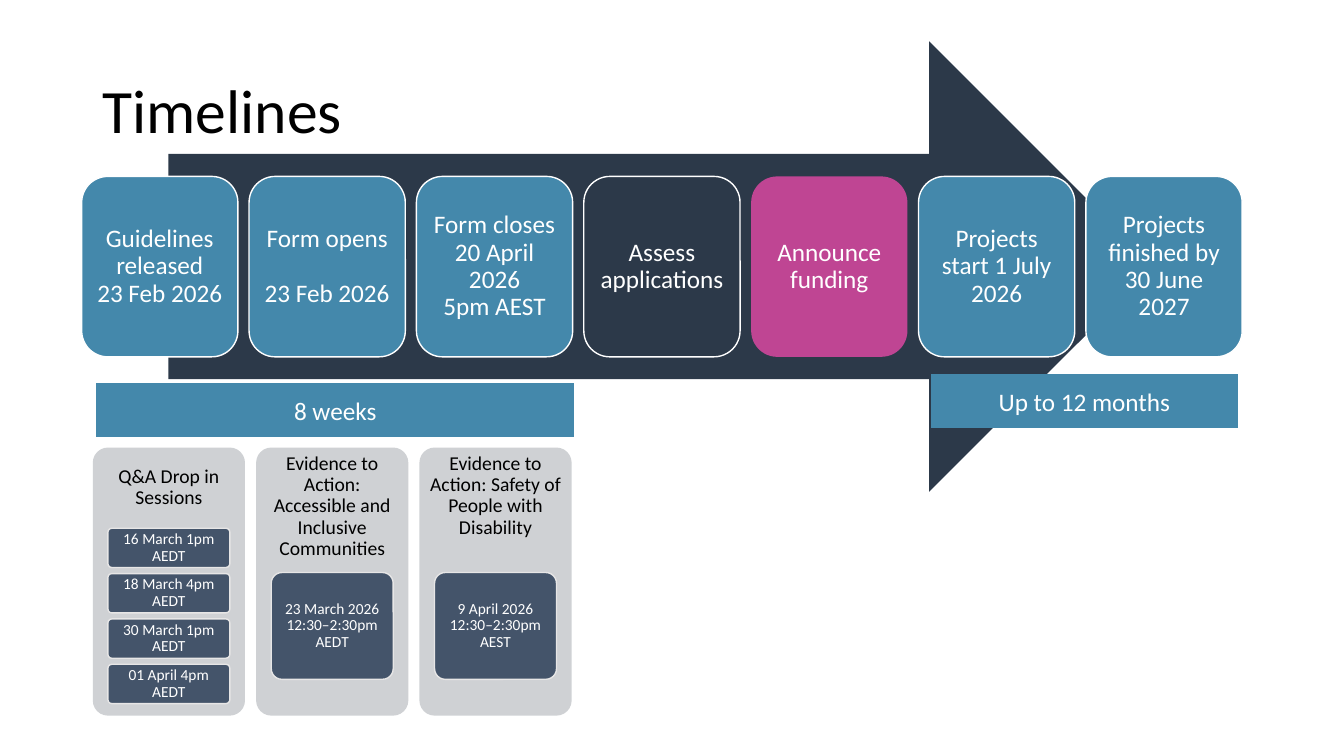
from pptx import Presentation
from pptx.dml.color import RGBColor
from pptx.enum.shapes import MSO_SHAPE
from pptx.enum.text import MSO_ANCHOR, PP_ALIGN
from pptx.util import Inches, Pt

COLORS = {
    "navy": "2C3949",
    "blue": "4488AB",
    "pink": "BF4593",
    "grey": "CFD1D4",
    "slate": "44546A",
    "pale": "E7E6E6",
    "white": "FFFFFF",
    "black": "000000",
}

STAGES = [
    ("Guidelines released\v23 Feb 2026", "blue", "white", 0),
    ("Form opens\n23 Feb 2026", "blue", "white", 19.8),
    ("Form closes\v20 April 2026\v5pm AEST", "blue", "white", 0),
    ("Assess applications", "navy", "white", 0),
    ("Announce funding", "pink", None, 0),
    ("Projects start 1 July 2026", "blue", "white", 0),
    ("Projects finished by 30 June 2027", "blue", "white", 0),
]

PERIODS = [
    ("Up to 12 months", 8.68, 3.57, 4.15),
    ("8 weeks", 0.1, 3.66, 6.45),
]

SESSIONS = [
    ("Q&A Drop in Sessions", MSO_ANCHOR.MIDDLE, 0.8, 5.24, 0.39,
     ["16 March 1pm AEDT", "18 March 4pm AEDT",
      "30 March 1pm AEDT", "01 April 4pm AEDT"]),
    ("Evidence to Action: Accessible and Inclusive Communities",
     MSO_ANCHOR.TOP, 1.2, 5.68, 1.06, ["23 March 2026 12:30–2:30pm AEDT"]),
    ("Evidence to Action: Safety of People with Disability",
     MSO_ANCHOR.TOP, 1.2, 5.68, 1.06, ["9 April 2026\v12:30–2:30pm AEST"]),
]


class Deck:
    font = "Calibri"

    def __init__(self, prs):
        self.slide = prs.slides.add_slide(prs.slide_layouts[6])

    def color(self, name):
        return RGBColor.from_string(COLORS[name])

    def set_text(self, sp, text, size, color="white", align=PP_ALIGN.CENTER,
                 anchor=MSO_ANCHOR.MIDDLE, inset=(0.1, 0.05), leading=0.9, gap=0):
        tf = sp.text_frame
        tf.word_wrap = True
        tf.vertical_anchor = anchor
        tf.margin_left = tf.margin_right = Inches(inset[0])
        tf.margin_top = tf.margin_bottom = Inches(inset[1])
        tf.text = text
        for i, p in enumerate(tf.paragraphs):
            p.alignment = align
            p.line_spacing = leading
            if i:
                p.space_before = Pt(gap)
            for r in p.runs:
                r.font.name = self.font
                r.font.size = Pt(size)
                r.font.color.rgb = self.color(color)

    def shape(self, kind, x, y, w, h, fill, line=None, adj=None):
        sp = self.slide.shapes.add_shape(
            kind, Inches(x), Inches(y), Inches(w), Inches(h))
        sp.shadow.inherit = False
        sp.fill.solid()
        sp.fill.fore_color.rgb = self.color(fill)
        if line:
            sp.line.color.rgb = self.color(line)
            sp.line.width = Pt(1)
        else:
            sp.line.fill.background()
        if adj is not None:
            sp.adjustments[0] = adj
        return sp

    def label(self, x, y, w, h, text, size, **style):
        sp = self.slide.shapes.add_textbox(
            Inches(x), Inches(y), Inches(w), Inches(h))
        self.set_text(sp, text, size, **style)

    def stage(self, x, text, fill, line, gap):
        sp = self.shape(MSO_SHAPE.ROUNDED_RECTANGLE, x, 1.75, 1.55, 1.79, fill, line)
        self.set_text(sp, text, 18, inset=(0.07, 0.07), gap=gap)

    def period(self, text, x, y, w):
        sp = self.shape(MSO_SHAPE.MATH_MINUS, x, y, w, 0.82, "blue", adj=0.66)
        self.set_text(sp, text, 18, leading=1.0)

    def session(self, x, title, anchor, title_height, top, height, dates):
        self.shape(MSO_SHAPE.ROUNDED_RECTANGLE, x, 4.44, 1.51, 2.66, "grey", adj=0.1)
        self.label(x, 4.44, 1.51, title_height, title, 14, color="black",
                   anchor=anchor, inset=(0.06, 0.06))
        for i, date in enumerate(dates):
            sp = self.shape(MSO_SHAPE.ROUNDED_RECTANGLE, x + 0.15, top + 0.45 * i,
                            1.21, height, "slate", "pale", 0.1)
            self.set_text(sp, date, 11, inset=(0.03, 0.02))


def main():
    prs = Presentation()
    prs.slide_width = Inches(13.33)
    prs.slide_height = Inches(7.5)
    deck = Deck(prs)
    deck.label(0.92, 0.4, 11.5, 1.45, "Timelines", 44, color="black",
               align=PP_ALIGN.LEFT)
    deck.shape(MSO_SHAPE.RIGHT_ARROW, 1.67, 0.41, 9.78, 4.47, "navy")
    for i, stage in enumerate(STAGES):
        deck.stage(0.81 + 1.66 * i, *stage)
    for period in PERIODS:
        deck.period(*period)
    for i, session in enumerate(SESSIONS):
        deck.session(0.92 + 1.62 * i, *session)
    prs.save("out.pptx")


if __name__ == "__main__":
    main()
